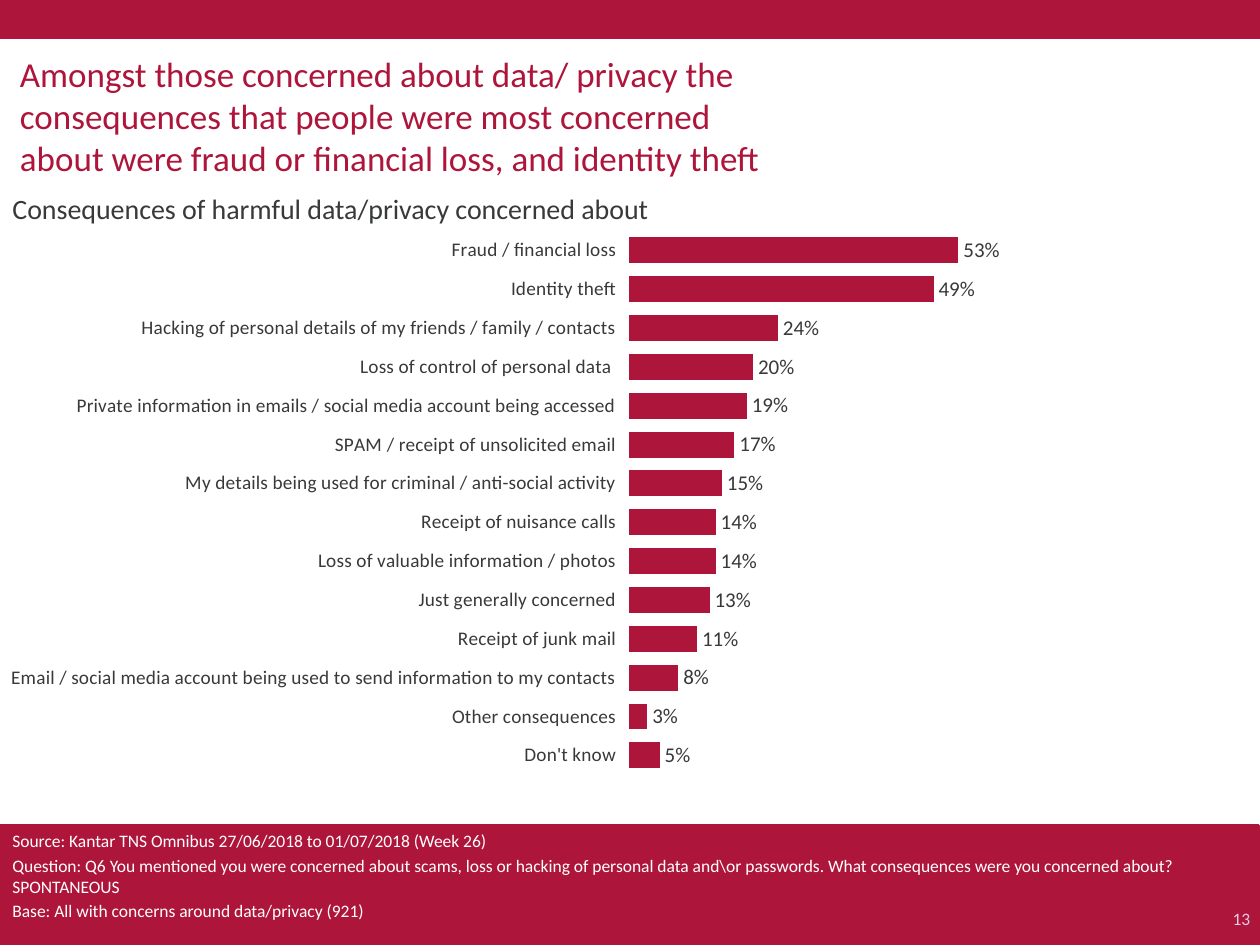
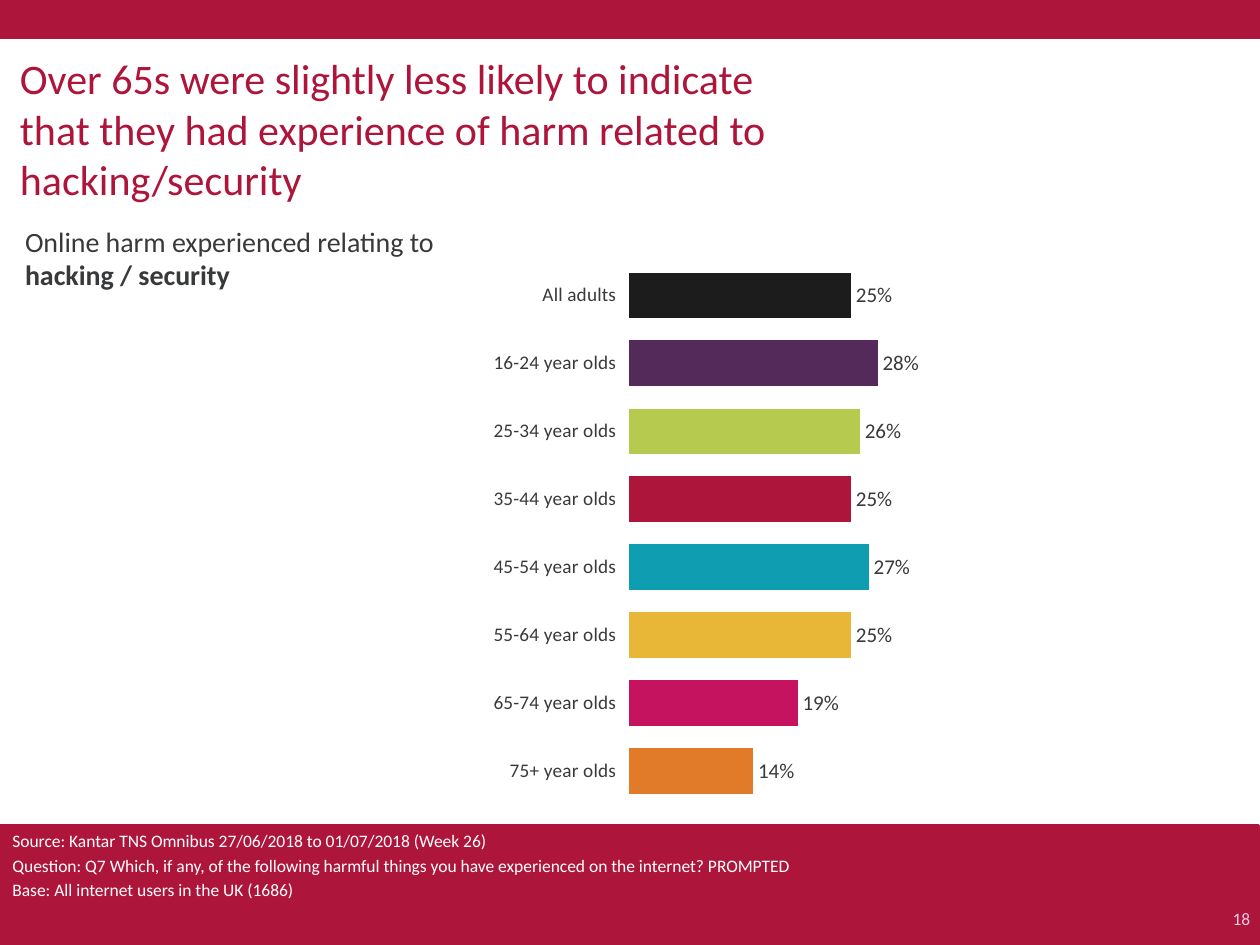
from dataclasses import dataclass

from lxml.etree import SubElement as Sub
from pptx import Presentation
from pptx.chart.data import CategoryChartData as ChartData
from pptx.dml.color import RGBColor as Color
from pptx.enum.chart import XL_CHART_TYPE as Kind, XL_LABEL_POSITION as Spot
from pptx.enum.shapes import MSO_SHAPE as Shape
from pptx.enum.text import MSO_ANCHOR as Anchor, PP_ALIGN as Align
from pptx.oxml.ns import qn
from pptx.util import Inches, Pt


@dataclass(frozen=True)
class Theme:
    # Colours
    red: str = "AE153B"
    ink: str = "38393A"
    white: str = "FFFFFF"
    pale: str = "E3CCE7"
    ages: tuple = ("1C1C1D", "532A59", "B6CA4F", "AE153B",
                   "0F9EB1", "E8B738", "C51360", "E27B29")
    # Type
    font: str = "Calibri"
    large: int = 24
    title: int = 20
    head: int = 16
    value: int = 12
    label: int = 11
    note: int = 10


# Grid of the slide, and the plot as shares of its chart
COLS, ROWS = 100, 75
PLOT = {"x": 0.5, "y": 0.03, "w": 0.5, "h": 0.97}
SOURCE = "Source: Kantar TNS Omnibus 27/06/2018 to 01/07/2018 (Week 26)"


class Deck:
    def __init__(self, theme):
        self.theme = theme
        self.show = Presentation()
        self.show.slide_width, self.show.slide_height = Inches(10), Inches(7.5)
        self.slide = None

    def place(self, col, row, wide, high):
        """Turn columns and rows into slide lengths."""
        unit_x = self.show.slide_width / COLS
        unit_y = self.show.slide_height / ROWS
        return (round(col * unit_x), round(row * unit_y),
                round(wide * unit_x), round(high * unit_y))

    def style(self, font, size, color):
        font.name, font.size = self.theme.font, Pt(size)
        font.color.rgb = Color.from_string(color)

    def fill_in(self, frame, text, size, color, align=Align.LEFT):
        frame.word_wrap = True
        frame.vertical_anchor = Anchor.TOP
        frame.text = text
        for i, para in enumerate(frame.paragraphs):
            para.alignment = align
            if i:
                para.space_before = Pt(size * 0.2)
            for run in para.runs:
                self.style(run.font, size, color)

    def text(self, area, text, size, color, align=Align.LEFT):
        frame = self.slide.shapes.add_textbox(*self.place(*area)).text_frame
        self.fill_in(frame, text, size, color, align)
        return frame

    def band(self, area, line=None):
        rect = self.slide.shapes.add_shape(Shape.RECTANGLE, *self.place(*area))
        rect.shadow.inherit = False
        self.paint(rect, self.theme.red)
        if line:
            rect.line.color.rgb = Color.from_string(self.theme.red)
            rect.line.width = Pt(line)
        else:
            rect.line.fill.background()
        return rect

    def paint(self, part, color):
        part.fill.solid()
        part.fill.fore_color.rgb = Color.from_string(color)

    def page(self, number):
        """Start a slide with its bands and page number."""
        self.slide = self.show.slides.add_slide(self.show.slide_layouts[6])
        self.band((0, 70.8, COLS, 4.2))
        self.band((0, 0, COLS, 3.1))
        self.band((94, 65.5, 5.9, 6), line=1.5)
        self.text((95.7, 71.6, 4.5, 2.8), number, self.theme.note,
                  self.theme.pale, Align.RIGHT)

    def title(self, text, size, wide):
        self.text((0.6, 3.7, wide, 7.7), text, size, self.theme.red)

    def head(self, text, col, row):
        return self.text((col, row, 98.9, 3.3), text,
                         self.theme.head, self.theme.ink)

    def notes(self, *lines):
        foot = self.band((0, 65.4, 96.5, 9.6))
        self.fill_in(foot.text_frame, "\n".join((SOURCE,) + lines),
                     self.theme.note, self.theme.white)

    def bars(self, row, data, top, tints=()):
        theme = self.theme
        source = ChartData(number_format="0%")
        source.categories = [name for name, _ in data]
        source.add_series("Series 1", [share / 100 for _, share in data])
        chart = self.slide.shapes.add_chart(
            Kind.BAR_CLUSTERED, *self.place(0.5, row, 98.8, 44.5), source).chart
        chart.has_title = chart.has_legend = False
        self.style(chart.font, theme.value, theme.ink)

        # Axes
        names, scale = chart.category_axis, chart.value_axis
        names.reverse_order = True
        names.format.line.fill.background()
        self.style(names.tick_labels.font, theme.label, theme.ink)
        scale.minimum_scale, scale.maximum_scale = 0, top
        scale.has_major_gridlines = scale.visible = False

        # Bars and labels
        plot = chart.plots[0]
        plot.gap_width, plot.vary_by_categories = 50, False
        series = plot.series[0]
        self.paint(series.format, theme.red)
        for i, tint in enumerate(tints):
            self.paint(series.points[i].format, tint)
        labels = series.data_labels
        labels.show_value, labels.position = True, Spot.OUTSIDE_END
        labels.number_format, labels.number_format_is_linked = "0%", False
        self.style(labels.font, theme.value, theme.ink)
        self.fix(chart)

    def fix(self, chart):
        """Pin the inner plot area, so that the bars start mid-slide."""
        area = chart.element.find(".//" + qn("c:plotArea")) if hasattr(
            chart, "element") else chart._chartSpace.chart.plotArea
        for old in area.findall(qn("c:layout")):
            area.remove(old)
        layout = area.makeelement(qn("c:layout"))
        area.insert(0, layout)
        pin = Sub(layout, qn("c:manualLayout"))
        parts = {"layoutTarget": "inner", "xMode": "edge", "yMode": "edge"}
        for name, value in {**parts, **PLOT}.items():
            Sub(pin, qn("c:" + name), val=str(value))


FEARS = [
    ("Fraud / financial loss", 53),
    ("Identity theft", 49),
    ("Hacking of personal details of my friends / family / contacts", 24),
    ("Loss of control of personal data ", 20),
    ("Private information in emails / social media account being accessed", 19),
    ("SPAM / receipt of unsolicited email", 17),
    ("My details being used for criminal / anti-social activity", 15),
    ("Receipt of nuisance calls", 14),
    ("Loss of valuable information / photos", 14),
    ("Just generally concerned", 13),
    ("Receipt of junk mail", 11),
    ("Email / social media account being used to send information "
     "to my contacts", 8),
    ("Other consequences", 3),
    ("Don't know", 5),
]
AGES = [("All adults", 25)] + [
    (span + " year olds", share) for span, share in (
        ("16-24", 28), ("25-34", 26), ("35-44", 25), ("45-54", 27),
        ("55-64", 25), ("65-74", 19), ("75+", 14))]


def main():
    theme = Theme()
    deck = Deck(theme)

    # Consequences people fear
    deck.page("13")
    deck.title("Amongst those concerned about data/ privacy the consequences "
               "that people were most concerned about were fraud or financial "
               "loss, and identity theft", theme.title, 61.2)
    deck.head("Consequences of harmful data/privacy concerned about", 0, 14.7)
    deck.notes("Question: Q6 You mentioned you were concerned about scams, "
               "loss or hacking of personal data and\\or passwords. What "
               "consequences were you concerned about? SPONTANEOUS",
               "Base: All with concerns around data/privacy (921)")
    deck.bars(17, FEARS, 1)

    # Harm by age group
    deck.page("18")
    deck.title("Over 65s were slightly less likely to indicate that they had "
               "experience of harm related to hacking/security",
               theme.large, 65.2)
    head = deck.head("Online harm experienced relating to\vhacking / security",
                     1, 17.3)
    head.paragraphs[0].runs[-1].font.bold = True
    deck.notes("Question: Q7 Which, if any, of the following harmful things "
               "you have experienced on the internet? PROMPTED",
               "Base: All internet users in the UK (1686)")
    deck.bars(19.4, AGES, 0.7, theme.ages)

    deck.show.save("out.pptx")


if __name__ == "__main__":
    main()
